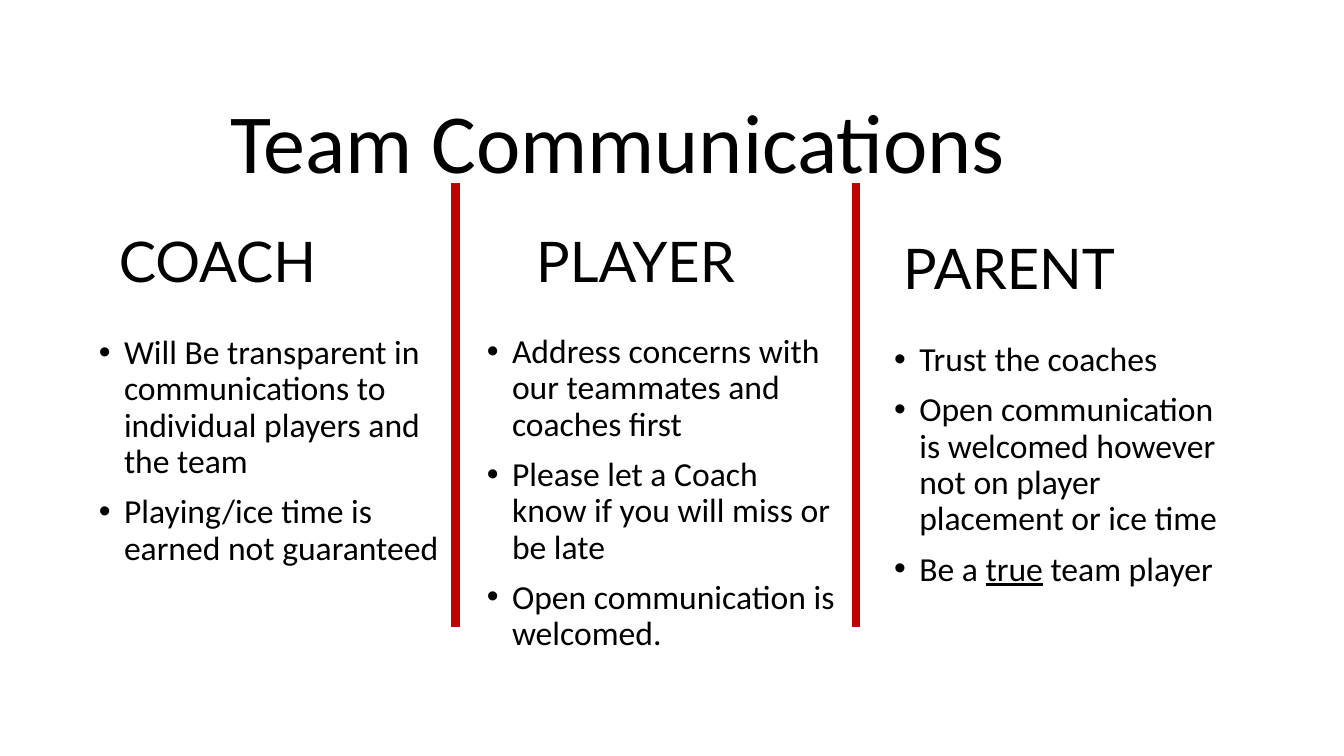
"""Build the team communications slide."""
from lxml.etree import SubElement
from pptx import Presentation
from pptx.dml.color import RGBColor
from pptx.enum.shapes import MSO_CONNECTOR as Connector
from pptx.enum.text import MSO_ANCHOR as Anchor, MSO_AUTO_SIZE as AutoSize, PP_ALIGN as Align
from pptx.oxml.ns import qn
from pptx.util import Inches, Pt

BLACK = RGBColor(0x00, 0x00, 0x00)
RED = RGBColor(0xC0, 0x00, 0x00)

COLUMNS = [
    ("COACH", (1.08, 2.19, 3.64, 0.87), (0.88, 3.28, 3.64, 3.43), [
        "Will Be transparent in communications to individual players and the team",
        "Playing/ice time is earned not guaranteed",
    ]),
    ("PLAYER", (5.22, 2.19, 3.64, 0.87), (4.73, 3.27, 3.69, 3.59), [
        "Address concerns with our teammates and coaches first",
        "Please let a Coach know if you will miss or be late",
        "Open communication is welcomed.",
    ]),
    ("PARENT", (8.86, 2.19, 3.56, 1), (8.77, 3.35, 3.64, 3.43), [
        "Trust the coaches",
        "Open communication is welcomed however not on player placement or ice time",
        "Be a _true_ team player",
    ]),
]
DIVIDERS = (4.52, 8.49)


def place(shape, box):
    """Move a shape to a box of left, top, width and height in inches."""
    shape.left, shape.top, shape.width, shape.height = map(Inches, box)


def add_bullet(paragraph):
    """Give a paragraph a hanging bullet."""
    properties = paragraph._p.get_or_add_pPr()
    properties.set("marL", str(Inches(0.25)))
    properties.set("indent", str(-Inches(0.25)))
    SubElement(properties, qn("a:buFont"), typeface="Arial")
    SubElement(properties, qn("a:buChar"), char="•")


def write(shape, lines, size=24, font="Calibri", align=Align.LEFT,
          anchor=Anchor.TOP, before=10, bullets=False):
    """Fill a shape with paragraphs; text between underscores is underlined."""
    frame = shape.text_frame
    frame.word_wrap = True
    frame.auto_size = AutoSize.NONE
    frame.vertical_anchor = anchor
    for index, line in enumerate(lines):
        paragraph = frame.add_paragraph() if index else frame.paragraphs[0]
        paragraph.alignment = align
        paragraph.line_spacing = 0.9
        paragraph.space_before = Pt(before)
        if bullets:
            add_bullet(paragraph)
        for part, text in enumerate(line.split("_")):
            run = paragraph.add_run()
            run.text = text
            run.font.size = Pt(size)
            run.font.name = font
            run.font.color.rgb = BLACK
            if part % 2:
                run.font.underline = True


def add_text_box(slide, box):
    """Add an empty text box."""
    return slide.shapes.add_textbox(*map(Inches, box))


def add_divider(slide, x):
    """Draw a vertical red line between two columns."""
    line = slide.shapes.add_connector(
        Connector.STRAIGHT, Inches(x), Inches(1.82), Inches(x), Inches(6.22))
    line.line.color.rgb = RED
    line.line.width = Pt(6)
    SubElement(line._element.spPr, qn("a:effectLst"))


def main():
    """Build and save the slide."""
    presentation = Presentation()
    presentation.slide_width = Inches(13.33)
    presentation.slide_height = Inches(7.5)
    slide = presentation.slides.add_slide(presentation.slide_layouts[1])
    title, body = slide.placeholders
    place(title, (0.88, 0.73, 10.49, 1.45))
    write(title, ["Team Communications"], size=60, align=Align.CENTER,
          anchor=Anchor.MIDDLE, before=0)
    for index, (heading, heading_box, list_box, points) in enumerate(COLUMNS):
        shape = add_text_box(slide, list_box) if index else body
        place(shape, list_box)
        write(shape, points, bullets=True)
        write(add_text_box(slide, heading_box), [heading], size=40, font="Lato",
              anchor=Anchor.MIDDLE)
    for x in DIVIDERS:
        add_divider(slide, x)
    presentation.save("out.pptx")


if __name__ == "__main__":
    main()
